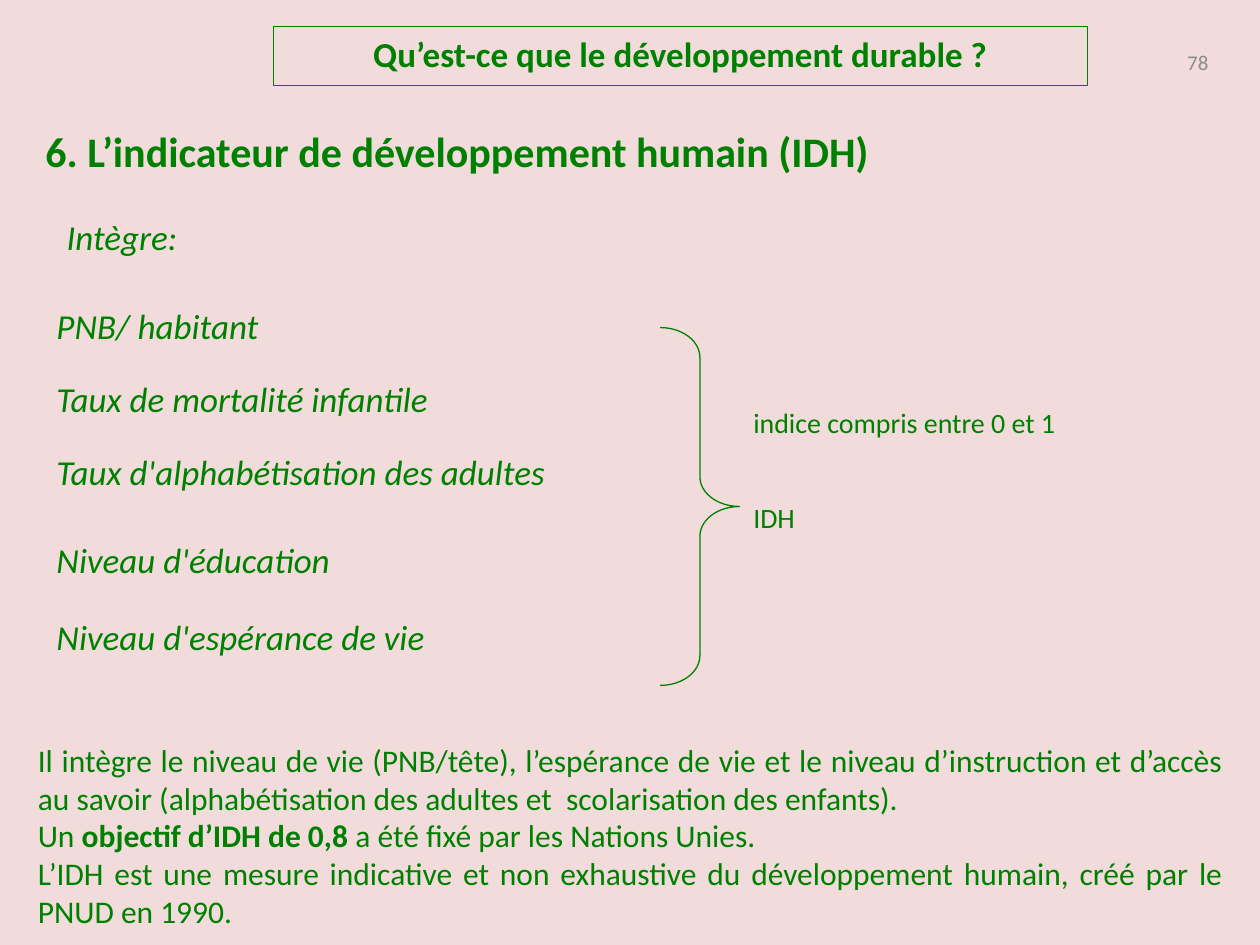
from dataclasses import dataclass

from lxml.etree import SubElement
from pptx import Presentation
from pptx.dml.color import RGBColor
from pptx.enum.shapes import MSO_SHAPE
from pptx.enum.text import MSO_ANCHOR, MSO_AUTO_SIZE, PP_ALIGN
from pptx.oxml.ns import qn
from pptx.util import Inches, Pt


@dataclass(frozen=True)
class Theme:
    font: str = "Calibri"
    paper: RGBColor = RGBColor(0xF2, 0xDC, 0xDB)
    green: RGBColor = RGBColor(0x00, 0x80, 0x00)
    grey: RGBColor = RGBColor(0x8C, 0x8C, 0x8C)
    heading: int = 24
    item: int = 20
    body: int = 18
    note: int = 16
    number: int = 12
    line: float = 0.75


@dataclass(frozen=True)
class Box:
    """Area in grid units: 100 columns by 75 rows on the slide."""
    left: float
    top: float
    width: float
    height: float

    def inner(self, left, top, width, height):
        return Box(self.left + left, self.top + top, width, height)

    def lengths(self):
        return [Inches(units / 10) for units in
                (self.left, self.top, self.width, self.height)]


THEME = Theme()
INDICATORS = [  # wording, row offset, height, size of the closing space
    ("PNB/ habitant", 0, 4.3, None),
    ("Taux de mortalité infantile", 5.8, 4.3, None),
    ("Taux d'alphabétisation des adultes", 11.6, 10.4, 18),
    ("Niveau d'éducation", 18, 5, 24),
    ("Niveau d'espérance de vie", 24.1, 5, 24),
]
SUMMARY = [
    [("Il intègre le niveau de vie (PNB/tête), l’espérance de vie et le niveau "
      "d’instruction et d’accès au savoir (alphabétisation des adultes et  "
      "scolarisation des enfants).", False)],
    [("Un ", False), ("objectif d’IDH de 0,8", True),
     (" a été fixé par les Nations Unies.", False)],
    [("L’IDH est une mesure indicative et non exhaustive du développement "
      "humain, créé par le PNUD en 1990.", False)],
]


def add_span(para, text, size, color=THEME.green, bold=False, italic=False):
    span = para.add_run()
    span.text = text
    font = span.font
    font.name, font.size, font.bold, font.italic = THEME.font, Pt(size), bold, italic
    font.color.rgb = color


def place(shape, box):
    shape.left, shape.top, shape.width, shape.height = box.lengths()


def add_textbox(page, box, anchor=MSO_ANCHOR.TOP, wrap=True):
    frame = page.shapes.add_textbox(*box.lengths()).text_frame
    frame.word_wrap = wrap
    frame.vertical_anchor = anchor
    return frame


def add_outline(page, kind, box):
    shape = page.shapes.add_shape(kind, *box.lengths())
    shape.shadow.inherit = False
    shape.fill.background()
    shape.line.color.rgb = THEME.green
    shape.line.width = Pt(THEME.line)
    return shape


def build_header(page, box):
    # Framed theme of the course
    frame = add_outline(page, MSO_SHAPE.RECTANGLE,
                        box.inner(21.7, 0, 64.6, 4.7)).text_frame
    frame.vertical_anchor = MSO_ANCHOR.TOP
    para = frame.paragraphs[0]
    para.alignment = PP_ALIGN.CENTER
    add_span(para, "Qu’est-ce que le développement durable ?", THEME.item, bold=True)

    # Page number
    para = add_textbox(page, box.inner(73.6, 0.8, 23.3, 4), MSO_ANCHOR.MIDDLE).paragraphs[0]
    para.alignment = PP_ALIGN.RIGHT
    add_span(para, "78", THEME.number, THEME.grey)

    # Section title
    title = page.shapes.title
    place(title, box.inner(2.6, 6.3, 71.8, 7.1))
    title.text_frame.vertical_anchor = MSO_ANCHOR.MIDDLE
    title.text_frame.auto_size = MSO_AUTO_SIZE.NONE
    para = title.text_frame.paragraphs[0]
    para.alignment = PP_ALIGN.LEFT
    add_span(para, "6. L’indicateur de développement humain (IDH)",
             THEME.heading, bold=True)


def build_indicators(page, box):
    # Lead-in
    frame = add_textbox(page, box.inner(0.8, 0, 12.1, 4.4), wrap=False)
    add_span(frame.paragraphs[0], "Intègre:", THEME.item, italic=True)

    # Components of the index
    for text, offset, height, closing_size in INDICATORS:
        frame = add_textbox(page, box.inner(0, 7.1 + offset, 47.6, height))
        para = frame.paragraphs[0]
        add_span(para, text, THEME.item, italic=True)
        if closing_size:
            add_span(para, " ", closing_size)


def build_result(page, box):
    # Brace gathering the components
    brace = add_outline(page, MSO_SHAPE.RIGHT_BRACE, box.inner(0, 0, 6.3, box.height))
    brace.adjustments[0] = 0.375
    brace.adjustments[1] = 0.5

    # What they add up to
    frame = add_textbox(page, box.inner(6.4, 5.7, 28.5, 11.8))
    add_span(frame.paragraphs[0], "indice compris entre 0 et 1", THEME.note)
    para = frame.add_paragraph()
    para.space_before = Pt(35)
    add_span(para, "IDH", THEME.note)


def build_summary(page, box):
    body = page.placeholders[1]
    place(body, box)
    frame = body.text_frame
    frame.auto_size = MSO_AUTO_SIZE.NONE
    for index, spans in enumerate(SUMMARY):
        para = frame.add_paragraph() if index else frame.paragraphs[0]
        para.alignment = PP_ALIGN.JUSTIFY
        para.space_before = Pt(0)
        # Plain paragraph: no indent, no bullet
        properties = para._p.get_or_add_pPr()
        properties.set("marL", "0")
        properties.set("indent", "0")
        SubElement(properties, qn("a:buNone"))
        for text, bold in spans:
            add_span(para, text, THEME.body, bold=bold)


def main():
    deck = Presentation()
    deck.slide_width, deck.slide_height = Inches(10), Inches(7.5)
    page = deck.slides.add_slide(deck.slide_layouts[1])
    page.background.fill.solid()
    page.background.fill.fore_color.rgb = THEME.paper

    build_header(page, Box(0, 2.1, 100, 13.4))
    build_indicators(page, Box(3.5, 16.6, 47.6, 36.2))
    build_result(page, Box(52.4, 26, 34.9, 28.4))
    build_summary(page, Box(2, 58.3, 96.1, 16.2))
    deck.save("out.pptx")


if __name__ == "__main__":
    main()
